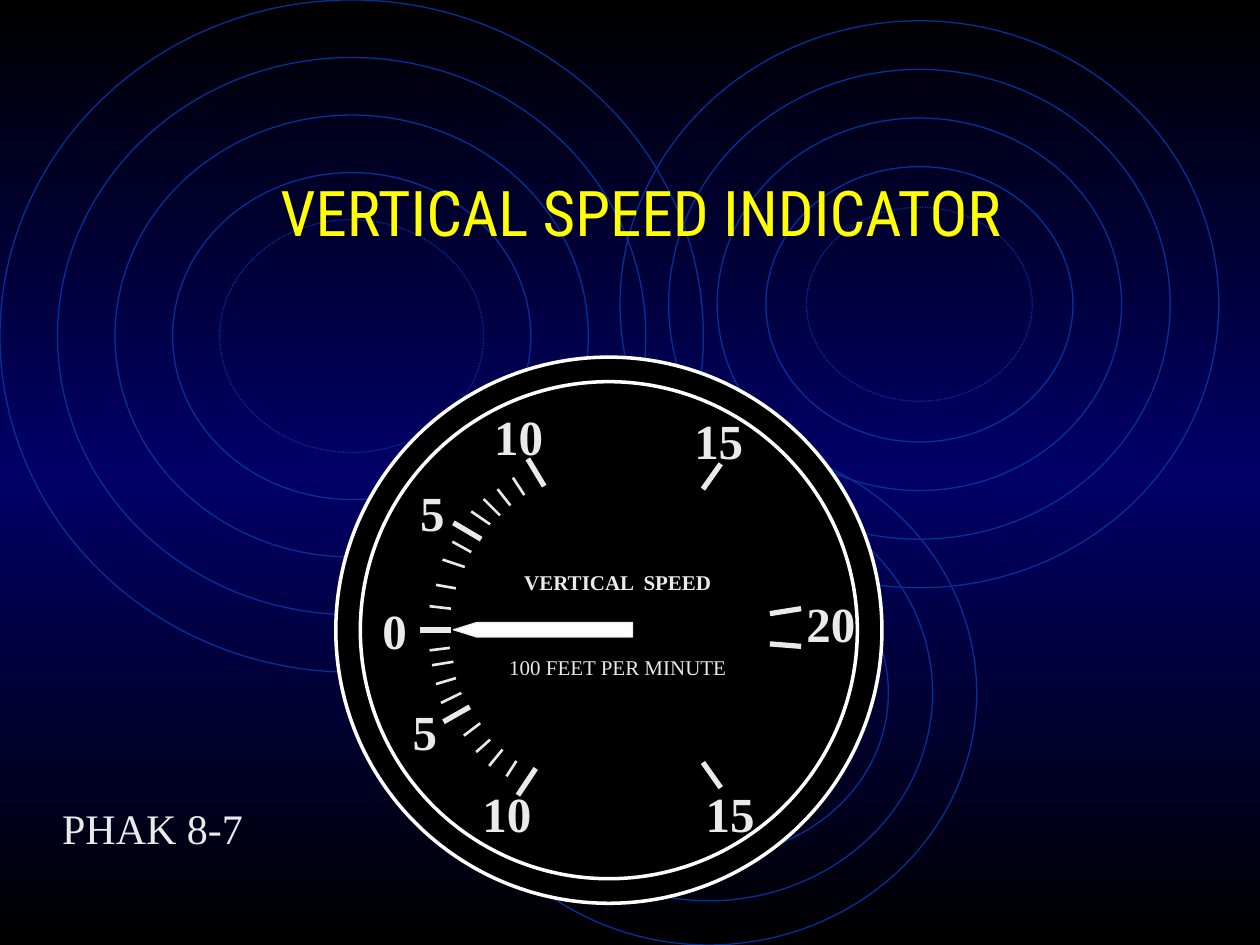
from copy import deepcopy

from pptx import Presentation
from pptx import util as u
from pptx.dml.color import RGBColor
from pptx.enum import dml, shapes, text
from pptx.oxml.ns import qn

COLORS = {"black": "000000", "navy": "000066", "ripple": "003399",
          "title": "FFFF00", "marking": "EAEAEA", "white": "FFFFFF"}
SERIF = "Times New Roman"


def paint(shape, fill, line, width):
    """Give a shape its fill and line, without a shadow."""
    shape.shadow.inherit = False
    if fill:
        shape.fill.solid()
        shape.fill.fore_color.rgb = RGBColor.from_string(COLORS[fill])
    else:
        shape.fill.background()
    shape.line.color.rgb = RGBColor.from_string(COLORS[line])
    shape.line.width = u.Pt(width)


def write(frame, words, color, wrap, **font_format):
    """Put one centred line of text into a text frame."""
    frame.word_wrap = wrap
    frame.auto_size = text.MSO_AUTO_SIZE.NONE
    frame.vertical_anchor = text.MSO_ANCHOR.TOP
    line = frame.paragraphs[0]
    line.alignment = text.PP_ALIGN.CENTER
    run = line.add_run()
    run.text = words
    run.font.color.rgb = RGBColor.from_string(COLORS[color])
    for key, value in font_format.items():
        setattr(run.font, key, value)


prs = Presentation()
prs.slide_width, prs.slide_height = u.Cm(25.4), u.Cm(19.05)
slide = prs.slides.add_slide(prs.slide_layouts[5])

# Background: black, navy in the middle, black
backdrop = slide.background.fill
backdrop.gradient()
backdrop.gradient_angle = 90
stop_list = slide._element.xpath(".//a:gsLst")[0]
stop_list.append(deepcopy(stop_list[0]))
for stop, place, color in zip(backdrop.gradient_stops, (0, 0.5, 1),
                              ("black", "navy", "black")):
    stop.position = place
    stop.color.rgb = RGBColor.from_string(COLORS[color])

# Ripples: left, top, width, height, step inwards, inset of the dotted ring
ripples = [
    (0, 0, 14.18, 13.55, 1.16, 4.43),
    (8.89, 8.89, 10.8, 10.16, 0.89, 3.35),
    (12.5, 0.42, 12.07, 11.43, 0.98, 3.76),
]
for left, top, width, height, step, dotted_inset in ripples:
    for inset in (0, step, 2 * step, 3 * step, dotted_inset):
        ring = slide.shapes.add_shape(
            shapes.MSO_SHAPE.OVAL, u.Cm(left + inset), u.Cm(top + inset),
            u.Cm(width - 2 * inset), u.Cm(height - 2 * inset))
        paint(ring, None, "ripple", 0.75)
        if inset == dotted_inset:
            ring.line.dash_style = dml.MSO_LINE.ROUND_DOT

# Title, brought in front of the ripples
title = slide.shapes.title
title.left, title.top, title.width, title.height = (
    u.Cm(v) for v in (1.91, 3.38, 22.02, 3.18))
write(title.text_frame, "VERTICAL SPEED INDICATOR", "title", False,
      name="Roboto Condensed", size=u.Pt(36))
slide.shapes._spTree.append(title._element)

# Dial face and bezel
dial_box = [u.Cm(v) for v in (6.77, 7.2, 11.01, 11.01)]
face = slide.shapes.add_shape(shapes.MSO_SHAPE.OVAL, *dial_box)
paint(face, "black", "black", 1.5)
bezel = slide.shapes.add_shape(shapes.MSO_SHAPE.DONUT, *dial_box)
bezel.adjustments[0] = 0.045
paint(bezel, "black", "white", 2)

# Scale marks by line width: x and y of both ends
scale_marks = {
    3: [
        (8.46, 12.7, 9.09, 12.7), (9.14, 10.54, 9.7, 10.87),
        (10.64, 9.25, 10.97, 9.8), (8.94, 14.55, 9.47, 14.25),
        (10.44, 16.03, 10.8, 15.49), (14.17, 9.86, 14.53, 9.35),
        (15.52, 12.37, 16.15, 12.27), (15.52, 12.98, 16.15, 13.03),
        (14.17, 15.37, 14.53, 15.88),
    ],
    1.5: [
        (8.66, 12.22, 9.09, 12.27), (8.79, 11.79, 9.19, 11.86),
        (8.92, 11.28, 9.37, 11.43), (9.12, 10.92, 9.5, 11.13),
        (9.5, 10.31, 9.88, 10.57), (9.75, 10.06, 10.08, 10.39),
        (10.03, 9.86, 10.29, 10.19), (10.34, 9.63, 10.57, 9.98),
        (8.66, 13.11, 9.07, 13.06), (8.71, 13.41, 9.14, 13.34),
        (8.79, 13.79, 9.19, 13.67), (8.89, 14.17, 9.3, 13.97),
        (9.35, 14.83, 9.68, 14.58), (9.6, 15.16, 9.88, 14.91),
        (9.86, 15.44, 10.13, 15.11), (10.21, 15.65, 10.41, 15.34),
    ],
}
for width, marks in scale_marks.items():
    for ends in marks:
        mark = slide.shapes.add_connector(
            shapes.MSO_CONNECTOR.STRAIGHT, *(u.Cm(v) for v in ends))
        mark.line.color.rgb = RGBColor.from_string(COLORS["marking"])
        mark.line.width = u.Pt(width)
        properties = mark._element.spPr
        properties.append(properties.makeelement(qn("a:effectLst"), {}))

# Needle at zero
needle = slide.shapes.add_shape(
    shapes.MSO_SHAPE.PENTAGON, u.Cm(9.14), u.Cm(12.55), u.Cm(3.61), u.Cm(0.29))
needle.rotation = 180
needle.adjustments[0] = 1.61
paint(needle, "white", "marking", 0.75)

# Lettering: words, left, top, width, height, size, bold
lettering = [
    ("VERTICAL  SPEED", 9.93, 11.35, 5.05, 0.76, 12, True),
    ("100 FEET PER MINUTE", 9.93, 13.08, 5.05, 0.76, 12, False),
    ("0", 7.42, 11.99, 1.07, 1.45, 28, True),
    ("10", 9.53, 8.08, 1.85, 1.45, 28, True),
    ("5", 8.18, 9.6, 1.07, 1.45, 28, True),
    ("5", 8.03, 14.02, 1.07, 1.45, 28, True),
    ("10", 9.19, 15.67, 2.06, 1.45, 28, True),
    ("15", 13.69, 15.67, 2.06, 1.45, 28, True),
    ("15", 13.46, 8.15, 2.06, 1.45, 28, True),
    ("20", 15.72, 11.84, 2.06, 1.45, 28, True),
    ("PHAK 8-7", 0, 16.05, 6.15, 1.27, 24, False),
]
for words, *box, size, bold in lettering:
    label = slide.shapes.add_textbox(*(u.Cm(v) for v in box))
    write(label.text_frame, words, "marking", True,
          name=SERIF, size=u.Pt(size), bold=bold)

prs.save("out.pptx")
